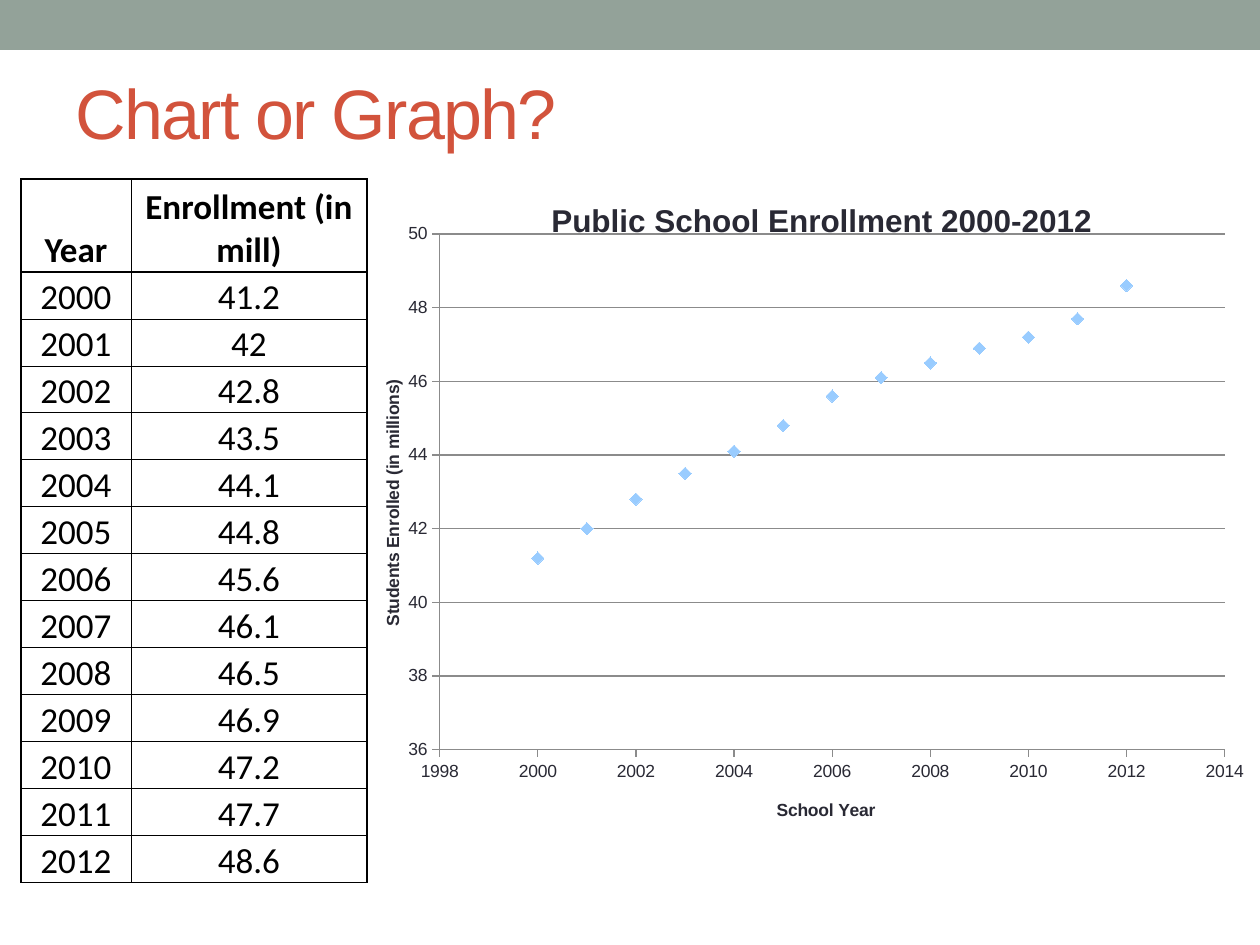
from dataclasses import dataclass

from lxml.etree import SubElement
from pptx import Presentation
from pptx.chart.data import XyChartData
from pptx.dml.color import RGBColor
from pptx.enum.chart import XL_CHART_TYPE, XL_MARKER_STYLE, XL_TICK_MARK
from pptx.enum.shapes import MSO_SHAPE
from pptx.enum.text import MSO_ANCHOR, PP_ALIGN
from pptx.oxml import parse_xml
from pptx.oxml.ns import nsdecls, qn
from pptx.util import Emu, Pt


@dataclass(frozen=True)
class Theme:
    bar: str = "93A299"
    title: str = "D2533C"
    ink: str = "292934"
    table: str = "000000"
    grid: str = "8B8B8B"
    marker: str = "99CCFF"
    heading_font: str = "Arial"
    table_font: str = "Calibri"
    title_size: int = 40
    table_size: int = 20
    chart_title_size: int = 18
    chart_size: int = 10


theme = Theme()
color = RGBColor.from_string
enrollment = [41.2, 42, 42.8, 43.5, 44.1, 44.8, 45.6, 46.1, 46.5, 46.9, 47.2, 47.7, 48.6]
by_year = list(enumerate(enrollment, start=2000))


def px(*lengths):
    """Turn pixels (126 to the inch) into a list of EMU lengths."""
    return [Emu(round(length * 914400 / 126)) for length in lengths]


def place_in_chart(parent, x, y, width=None, height=None):
    """Set a manual layout, in fractions of the chart, on a title or plot area."""
    old = parent.find(qn("c:layout"))
    if old is not None:
        parent.remove(old)
    values = {"xMode": "edge", "yMode": "edge", "x": x, "y": y}
    if width:
        values = {"layoutTarget": "inner", **values, "w": width, "h": height}
    parts = "".join(f'<c:{name} val="{value}"/>' for name, value in values.items())
    layout = parse_xml(
        f'<c:layout {nsdecls("c")}><c:manualLayout>{parts}</c:manualLayout></c:layout>')
    text = parent.find(qn("c:tx"))
    parent.insert(0 if text is None else 1, layout)


deck = Presentation()
deck.slide_width, deck.slide_height = px(1260, 945)
page = deck.slides.add_slide(deck.slide_layouts[5])

# Top bar
bar = page.shapes.add_shape(MSO_SHAPE.RECTANGLE, *px(0, 0, 1260, 50))
bar.shadow.inherit = False
bar.fill.solid()
bar.fill.fore_color.rgb = color(theme.bar)
bar.line.fill.background()

# Title
title = page.shapes.title
title.left, title.top, title.width, title.height = px(63, 63, 778, 97)
title.text_frame.text = "Chart or Graph?"
title.text_frame.vertical_anchor = MSO_ANCHOR.MIDDLE
para = title.text_frame.paragraphs[0]
para.alignment = PP_ALIGN.LEFT
para.font.name = theme.heading_font
para.font.size = Pt(theme.title_size)
para.font.color.rgb = color(theme.title)
para.runs[0].font._element.set("spc", "-100")

# Enrollment table
rows = [("Year", "Enrollment (in mill)"), *by_year]
table = page.shapes.add_table(len(rows), 2, *px(21, 179, 346, 704)).table
table.first_row = table.horz_banding = False
for column, width in zip(table.columns, px(110, 236)):
    column.width = width
for row_index, values in enumerate(rows):
    table.rows[row_index].height = px(47 if row_index else 93)[0]
    for column_index, value in enumerate(values):
        cell = table.cell(row_index, column_index)
        cell.text = str(value)
        cell.vertical_anchor = MSO_ANCHOR.BOTTOM
        cell.margin_left, cell.margin_right, cell.margin_top, cell.margin_bottom = px(1, 1, 1, 0)
        para = cell.text_frame.paragraphs[0]
        para.alignment = PP_ALIGN.CENTER
        para.font.name = theme.table_font
        para.font.size = Pt(theme.table_size)
        para.font.bold = row_index == 0
        para.font.color.rgb = color(theme.table)
        thick_sides = {
            "L": column_index == 0,
            "R": column_index == 1,
            "T": row_index <= 1,
            "B": row_index in (0, len(rows) - 1),
        }
        properties = cell._tc.get_or_add_tcPr()
        for side, thick in thick_sides.items():
            border = SubElement(properties, qn(f"a:ln{side}"), w=str(Pt(1 if thick else 0.5)))
            SubElement(SubElement(border, qn("a:solidFill")), qn("a:srgbClr"), val=theme.table)
        cell.fill.background()

# Enrollment scatter chart
chart_data = XyChartData()
points = chart_data.add_series("Series 1")
for year, students in by_year:
    points.add_data_point(year, students)
chart = page.shapes.add_chart(
    XL_CHART_TYPE.XY_SCATTER, *px(378, 168, 882, 661), chart_data).chart
chart.has_legend = False
chart.font.name = theme.heading_font
chart.font.size = Pt(theme.chart_size)
chart.font.color.rgb = color(theme.ink)

series = chart.plots[0].series[0]
chart.plots[0].vary_by_categories = False
series.smooth = False
series.format.line.fill.background()
series.marker.style = XL_MARKER_STYLE.DIAMOND
series.marker.size = 7
series.marker.format.fill.solid()
series.marker.format.fill.fore_color.rgb = color(theme.marker)
series.marker.format.line.fill.background()

year_axis, student_axis = chart.category_axis, chart.value_axis
for axis, low, high in ((year_axis, 1998, 2014), (student_axis, 36, 50)):
    axis.minimum_scale, axis.maximum_scale, axis.major_unit = low, high, 2
    axis.major_tick_mark = XL_TICK_MARK.OUTSIDE
    axis.has_major_gridlines = axis is student_axis
    axis.tick_labels.number_format = "General"
    axis.tick_labels.number_format_is_linked = False
    axis.format.line.color.rgb = color(theme.grid)
    axis.format.line.width = Pt(0.75)
grid_line = student_axis.major_gridlines.format.line
grid_line.color.rgb = color(theme.grid)
grid_line.width = Pt(0.75)

for owner, text, size in (
    (chart, "Public School Enrollment 2000-2012", theme.chart_title_size),
    (year_axis, "School Year", theme.chart_size),
    (student_axis, "Students Enrolled (in millions)", theme.chart_size),
):
    owner.has_title = True
    frame = (chart.chart_title if owner is chart else owner.axis_title).text_frame
    frame.text = text
    font = frame.paragraphs[0].font
    font.name = theme.heading_font
    font.size = Pt(size)
    font.bold = True
    font.color.rgb = color(theme.ink)

place_in_chart(chart.chart_title._element, 0.19, 0.04)
place_in_chart(chart._chartSpace.chart.plotArea, 0.07, 0.1, 0.89, 0.78)

deck.save("out.pptx")
